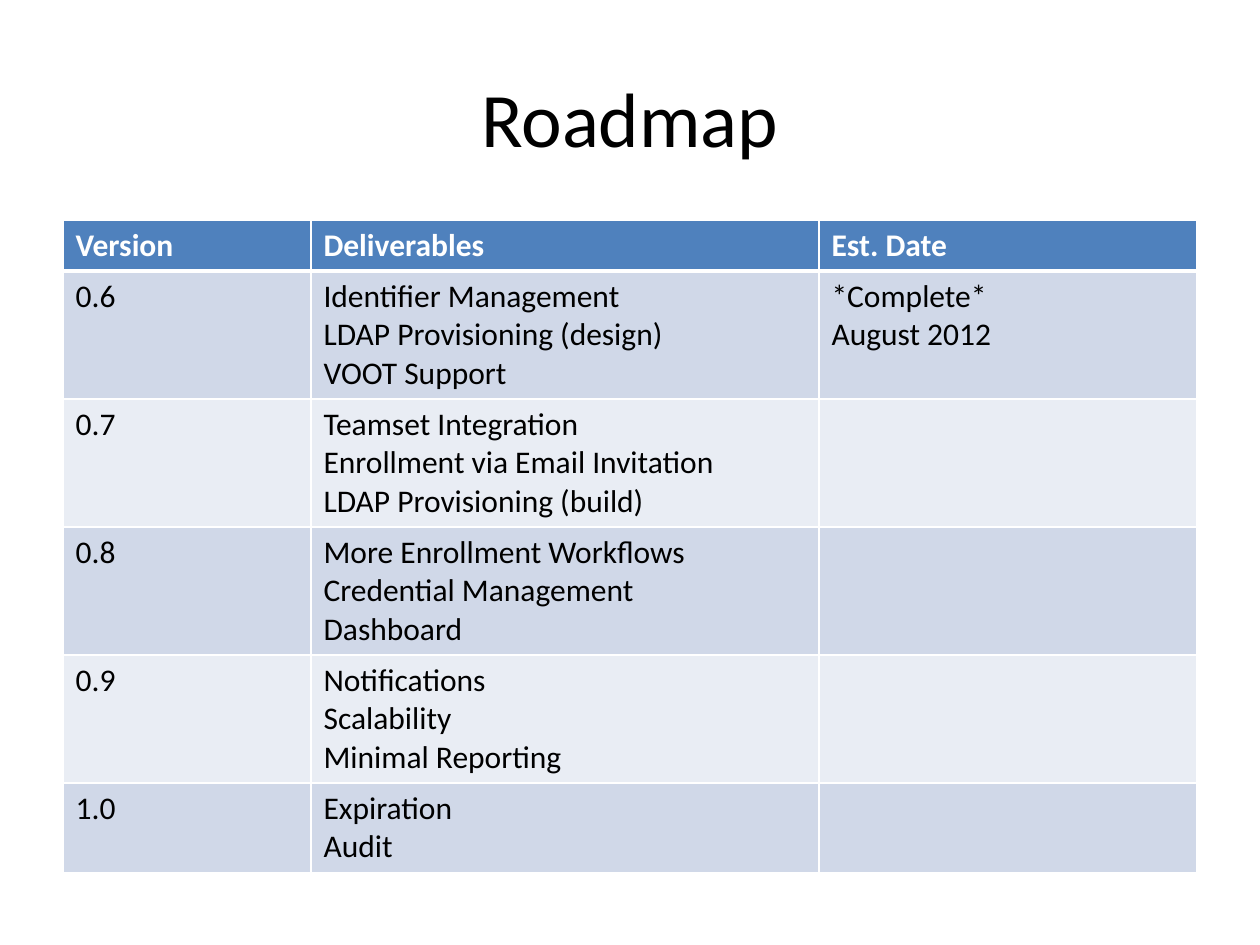
from typing import NamedTuple

from pptx import Presentation
from pptx.dml.color import RGBColor as RGB
from pptx.enum.text import MSO_ANCHOR as Anchor, PP_ALIGN as Align
from pptx.oxml import parse_xml
from pptx.oxml.ns import nsdecls
from pptx.util import Pt

SCALE = 914400 / 126  # EMU per px
HUES = {
    "head": "4F81BD",
    "odd": "D0D8E8",
    "even": "E9EDF4",
    "white": "FFFFFF",
    "black": "000000",
}
FONT = "Calibri"
COLS = (248, 508, 378)
HEAD_H, LINE_H, PAD_H = 51, 39, 11


class Release(NamedTuple):
    version: str
    items: str
    date: str = ""


HEAD = Release("Version", "Deliverables", "Est. Date")
PLAN = [
    Release("0.6", "Identifier Management\nLDAP Provisioning (design)\nVOOT Support",
            "*Complete*\nAugust 2012"),
    Release("0.7", "Teamset Integration\nEnrollment via Email Invitation\n"
                   "LDAP Provisioning (build)"),
    Release("0.8", "More Enrollment Workflows\nCredential Management\nDashboard"),
    Release("0.9", "Notifications\nScalability\nMinimal Reporting"),
    Release("1.0", "Expiration\nAudit"),
]


def px(count: int) -> int:
    return round(count * SCALE)


def style(frame, size: int, hue: str, bold: bool = False) -> None:
    for par in frame.paragraphs:
        for run in par.runs:
            font = run.font
            font.name, font.size, font.bold = FONT, Pt(size), bold
            font.color.rgb = RGB.from_string(HUES[hue])


def edge(cell, side: str, width: int) -> None:
    """Add a white border; call in the order L, R, T, B, before the fill."""
    cell._tc.get_or_add_tcPr().append(parse_xml(
        f'<a:ln{side} {nsdecls("a")} w="{Pt(width)}"><a:solidFill>'
        f'<a:srgbClr val="{HUES["white"]}"/></a:solidFill></a:ln{side}>'))


def draw_row(table, index: int, entry: Release) -> None:
    head = index == 0
    lines = entry.items.count("\n") + 1
    table.rows[index].height = px(HEAD_H if head else lines * LINE_H + PAD_H)
    fill = "head" if head else "odd" if index % 2 else "even"
    widths = {"L": 1, "R": 1, "T": 3 if index == 1 else 1, "B": 3 if head else 1}
    for cell, text in zip(table.rows[index].cells, entry):
        for side, width in widths.items():
            edge(cell, side, width)
        cell.fill.solid()
        cell.fill.fore_color.rgb = RGB.from_string(HUES[fill])
        cell.text_frame.text = text
        style(cell.text_frame, 18, "white" if head else "black", head)


def main() -> None:
    deck = Presentation()
    deck.slide_width, deck.slide_height = px(1260), px(945)
    slide = deck.slides.add_slide(deck.slide_layouts[5])

    title = slide.shapes.title
    title.left, title.top, title.width, title.height = map(px, (63, 38, 1134, 157))
    frame = title.text_frame
    frame.text = "Roadmap"
    frame.vertical_anchor = Anchor.MIDDLE
    frame.paragraphs[0].alignment = Align.CENTER
    style(frame, 44, "black")

    rows = [HEAD, *PLAN]
    table = slide.shapes.add_table(
        len(rows), len(COLS), px(63), px(220), px(sum(COLS)), px(651)).table
    for col, width in zip(table.columns, COLS):
        col.width = px(width)
    for index, entry in enumerate(rows):
        draw_row(table, index, entry)

    deck.save("out.pptx")


if __name__ == "__main__":
    main()
